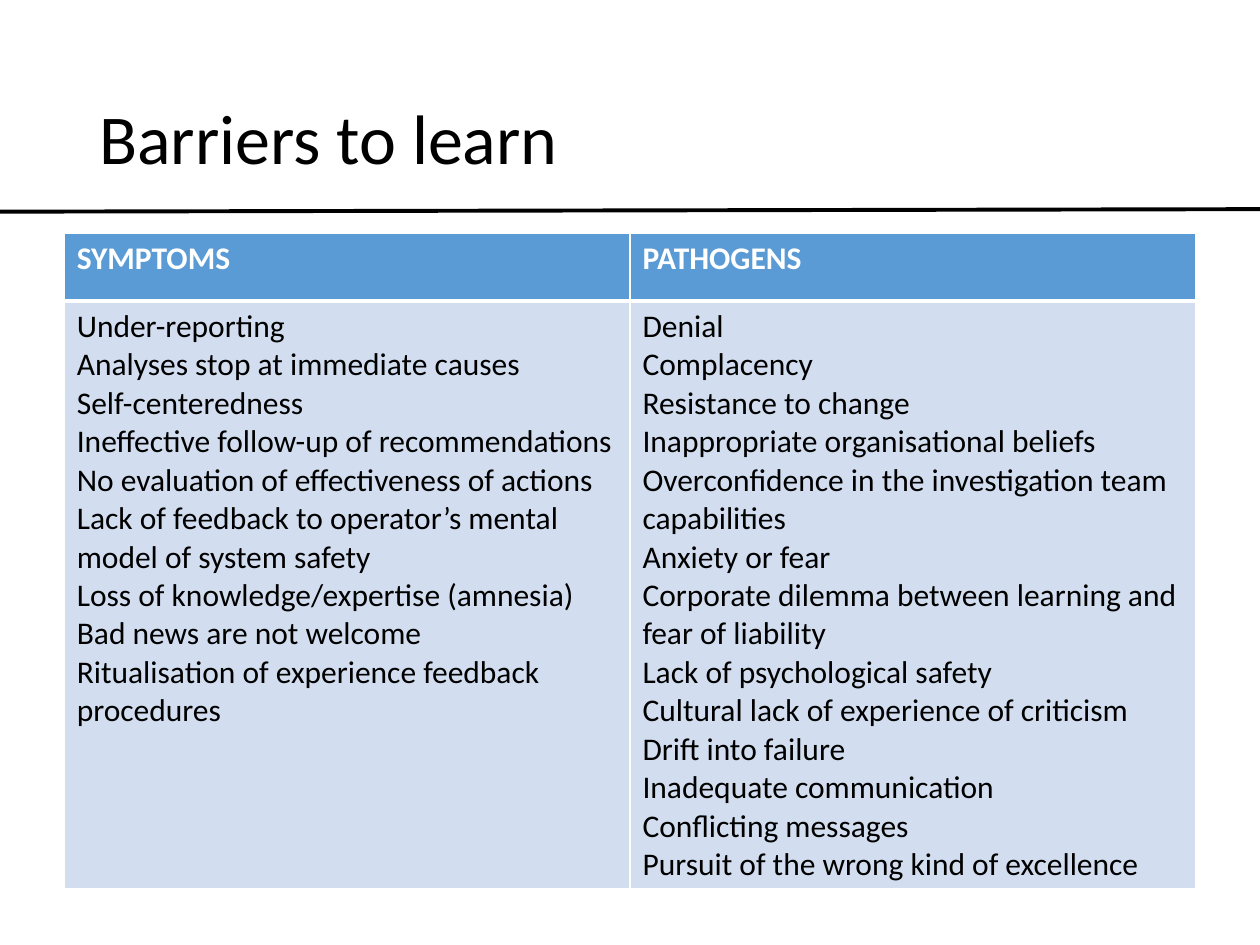
from lxml.etree import SubElement
from pptx import Presentation
from pptx.dml.color import RGBColor
from pptx.enum.shapes import MSO_CONNECTOR
from pptx.enum.text import MSO_ANCHOR
from pptx.oxml.ns import qn
from pptx.util import Inches, Pt

COLORS = {"text": "000000", "header": "5B9BD5", "body": "D2DEEF", "white": "FFFFFF"}
FONT = "Calibri"
COLUMNS = {
    "SYMPTOMS": [
        "Under-reporting",
        "Analyses stop at immediate causes",
        "Self-centeredness",
        "Ineffective follow-up of recommendations",
        "No evaluation of effectiveness of actions",
        "Lack of feedback to operator’s mental model of system safety",
        "Loss of knowledge/expertise (amnesia)",
        "Bad news are not welcome",
        "Ritualisation of experience feedback procedures",
    ],
    "PATHOGENS": [
        "Denial",
        "Complacency",
        "Resistance to change",
        "Inappropriate organisational beliefs",
        "Overconfidence in the investigation team capabilities",
        "Anxiety or fear",
        "Corporate dilemma between learning and fear of liability",
        "Lack of psychological safety",
        "Cultural lack of experience of criticism",
        "Drift into failure",
        "Inadequate communication",
        "Conflicting messages",
        "Pursuit of the wrong kind of excellence",
    ],
}


def add_run(paragraph, text, size, color, bold=False):
    run = paragraph.add_run()
    run.text = text
    run.font.name = FONT
    run.font.size = Pt(size)
    run.font.bold = bold
    run.font.color.rgb = RGBColor.from_string(COLORS[color])


def fill_cell(cell, lines, fill, color, bold, border_widths):
    properties = cell._tc.get_or_add_tcPr()
    for side, width in zip("LRTB", border_widths):
        border = SubElement(properties, qn(f"a:ln{side}"), w=str(Pt(width)))
        border_fill = SubElement(border, qn("a:solidFill"))
        SubElement(border_fill, qn("a:srgbClr"), val=COLORS["white"])
    cell.fill.solid()
    cell.fill.fore_color.rgb = RGBColor.from_string(COLORS[fill])
    for index, line in enumerate(lines):
        frame = cell.text_frame
        paragraph = frame.add_paragraph() if index else frame.paragraphs[0]
        add_run(paragraph, line, 18, color, bold)


presentation = Presentation()
presentation.slide_width = Inches(10)
presentation.slide_height = Inches(7.5)
slide = presentation.slides.add_slide(presentation.slide_layouts[6])

title = slide.shapes.add_textbox(Inches(0.69), Inches(0.4), Inches(8.62), Inches(1.45))
title.text_frame.word_wrap = True
title.text_frame.vertical_anchor = MSO_ANCHOR.MIDDLE
title_paragraph = title.text_frame.paragraphs[0]
title_paragraph.line_spacing = 0.9
add_run(title_paragraph, "Barriers to learn", 40, "text")

rule = slide.shapes.add_connector(
    MSO_CONNECTOR.STRAIGHT, Inches(0), Inches(1.68), Inches(10), Inches(1.66)
)
rule.line.color.rgb = RGBColor.from_string(COLORS["text"])
rule.line.width = Pt(2.25)
SubElement(rule._element.spPr, qn("a:effectLst"))

table = slide.shapes.add_table(
    2, len(COLUMNS), Inches(0.51), Inches(1.85), Inches(8.98), Inches(5.2)
).table
table.rows[0].height = Inches(0.54)
table.rows[1].height = Inches(4.66)
for column, (heading, items) in enumerate(COLUMNS.items()):
    table.columns[column].width = Inches(4.49)
    fill_cell(table.cell(0, column), [heading], "header", "white", True, (1, 1, 1, 3))
    fill_cell(table.cell(1, column), items, "body", "text", False, (1, 1, 3, 1))

presentation.save("out.pptx")
